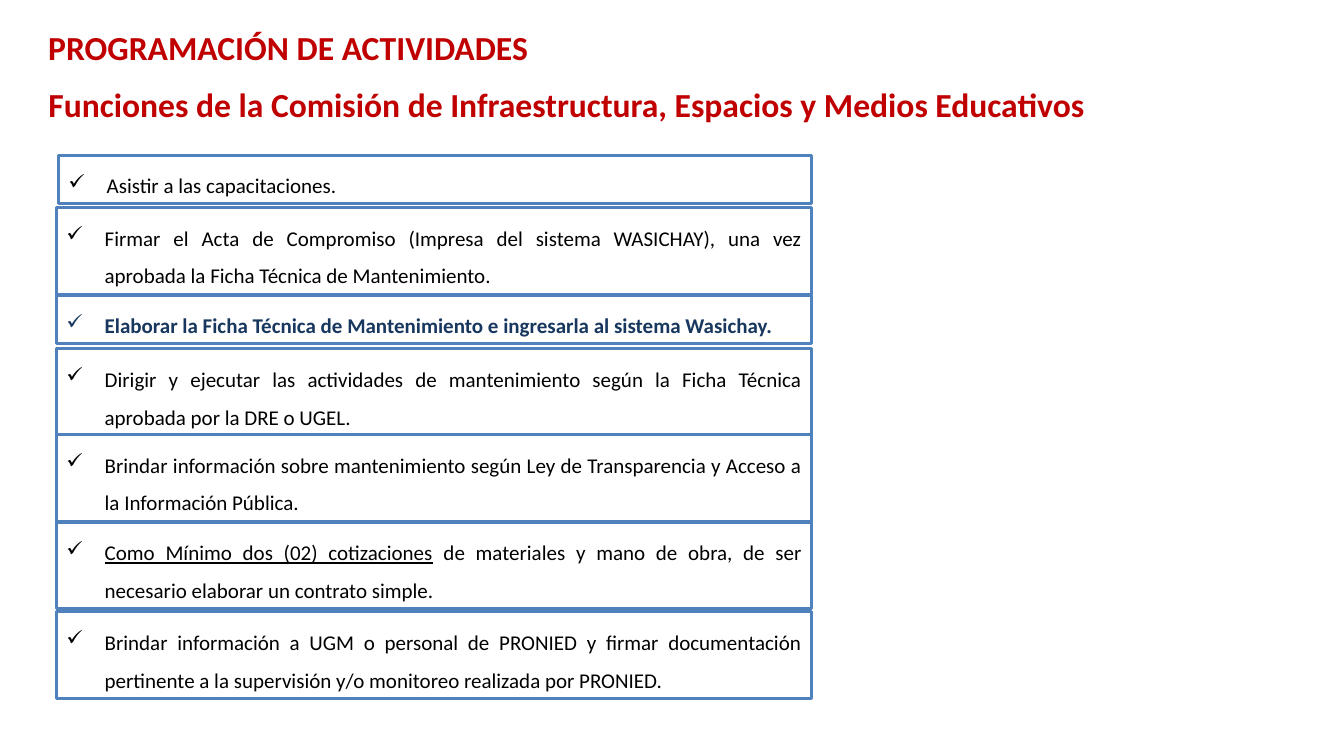
from lxml.etree import SubElement
from pptx import Presentation
from pptx.dml.color import RGBColor
from pptx.enum.shapes import MSO_SHAPE as Form
from pptx.enum.text import MSO_ANCHOR as Anchor, MSO_AUTO_SIZE as Fit, PP_ALIGN as Align
from pptx.oxml.ns import qn
from pptx.util import Inches, Pt

RED = RGBColor(0xC0, 0x00, 0x00)
BLUE = RGBColor(0x4F, 0x81, 0xBD)
NAVY = RGBColor(0x17, 0x37, 0x5E)
BLACK = RGBColor(0x00, 0x00, 0x00)
WHITE = RGBColor(0xFF, 0xFF, 0xFF)

WIDE, HIGH = Inches(13.33), Inches(7.5)
EDGE = 2.85
LEFT, RIGHT = 4.2, 60.39
ONE, TWO = 6.4, 11.47

PLAIN, BOLD, UNDER = "plain", "bold", "under"
TASKS = [
    (4.35, 20.53, ONE, [("Asistir a las capacitaciones.", PLAIN)]),
    (LEFT, 27.47, TWO, [("Firmar el Acta de Compromiso (Impresa del sistema WASICHAY), una vez "
                         "aprobada la Ficha Técnica de Mantenimiento.", PLAIN)]),
    (LEFT, 39.07, ONE, [("Elaborar la Ficha Técnica de Mantenimiento e ingresarla al sistema "
                         "Wasichay.", BOLD)]),
    (LEFT, 46.13, TWO, [("Dirigir y ejecutar las actividades de mantenimiento según la Ficha "
                         "Técnica aprobada por la DRE o UGEL.", PLAIN)]),
    (LEFT, 57.47, TWO, [("Brindar información sobre mantenimiento según Ley de Transparencia y "
                         "Acceso a la Información Pública.", PLAIN)]),
    (LEFT, 69.07, TWO, [("Como Mínimo dos (02) cotizaciones", UNDER),
                        (" de materiales y mano de obra, de ser necesario elaborar un contrato "
                         "simple.", PLAIN)]),
    (LEFT, 80.93, TWO, [("Brindar información a UGM o personal de PRONIED y firmar documentación "
                         "pertinente a la supervisión y/o monitoreo realizada por PRONIED.", PLAIN)]),
]


def share(x, y, w, h):
    return [round(part * whole / 100)
            for part, whole in zip((x, y, w, h), (WIDE, HIGH, WIDE, HIGH))]


def add_run(para, text, size, color, bold=False, under=False):
    run = para.add_run()
    run.text = text
    font = run.font
    font.name, font.size = "Calibri", Pt(size)
    font.bold, font.underline = bold, under
    font.color.rgb = color


def set_head(shape, text, area, anchor):
    shape.left, shape.top, shape.width, shape.height = area
    frame = shape.text_frame
    frame.word_wrap = True
    frame.auto_size = Fit.NONE
    frame.vertical_anchor = anchor
    para = frame.paragraphs[0]
    para.alignment = Align.LEFT
    add_run(para, text, 24, RED, bold=True)


def add_check(para):
    props = para._p.get_or_add_pPr()
    props.set("marL", str(Inches(0.38)))
    props.set("indent", str(-Inches(0.38)))
    SubElement(props, qn("a:buChar")).set("char", "✓")


def add_task(slide, left, top, height, runs):
    box = slide.shapes.add_shape(Form.RECTANGLE, *share(left, top, RIGHT - left, height))
    box.shadow.inherit = False
    box.fill.solid()
    box.fill.fore_color.rgb = WHITE
    box.line.color.rgb = BLUE
    box.line.width = Pt(2)
    frame = box.text_frame
    frame.word_wrap = True
    frame.auto_size = Fit.SHAPE_TO_FIT_TEXT
    frame.vertical_anchor = Anchor.TOP
    para = frame.paragraphs[0]
    add_check(para)
    para.alignment = Align.JUSTIFY
    para.line_spacing = 1.5
    for text, style in runs:
        add_run(para, text, 15, NAVY if style == BOLD else BLACK,
                bold=style == BOLD, under=style == UNDER)


def main():
    deck = Presentation()
    deck.slide_width, deck.slide_height = WIDE, HIGH
    slide = deck.slides.add_slide(deck.slide_layouts[5])
    set_head(slide.shapes.title,
             "Funciones de la Comisión de Infraestructura, Espacios y Medios Educativos",
             share(EDGE, 9.6, 93.02, 7.47), Anchor.BOTTOM)
    for task in TASKS:
        add_task(slide, *task)
    area = share(EDGE, 2.93, 40.14, 7.47)
    set_head(slide.shapes.add_textbox(*area), "PROGRAMACIÓN DE ACTIVIDADES", area, Anchor.TOP)
    deck.save("out.pptx")


if __name__ == "__main__":
    main()
